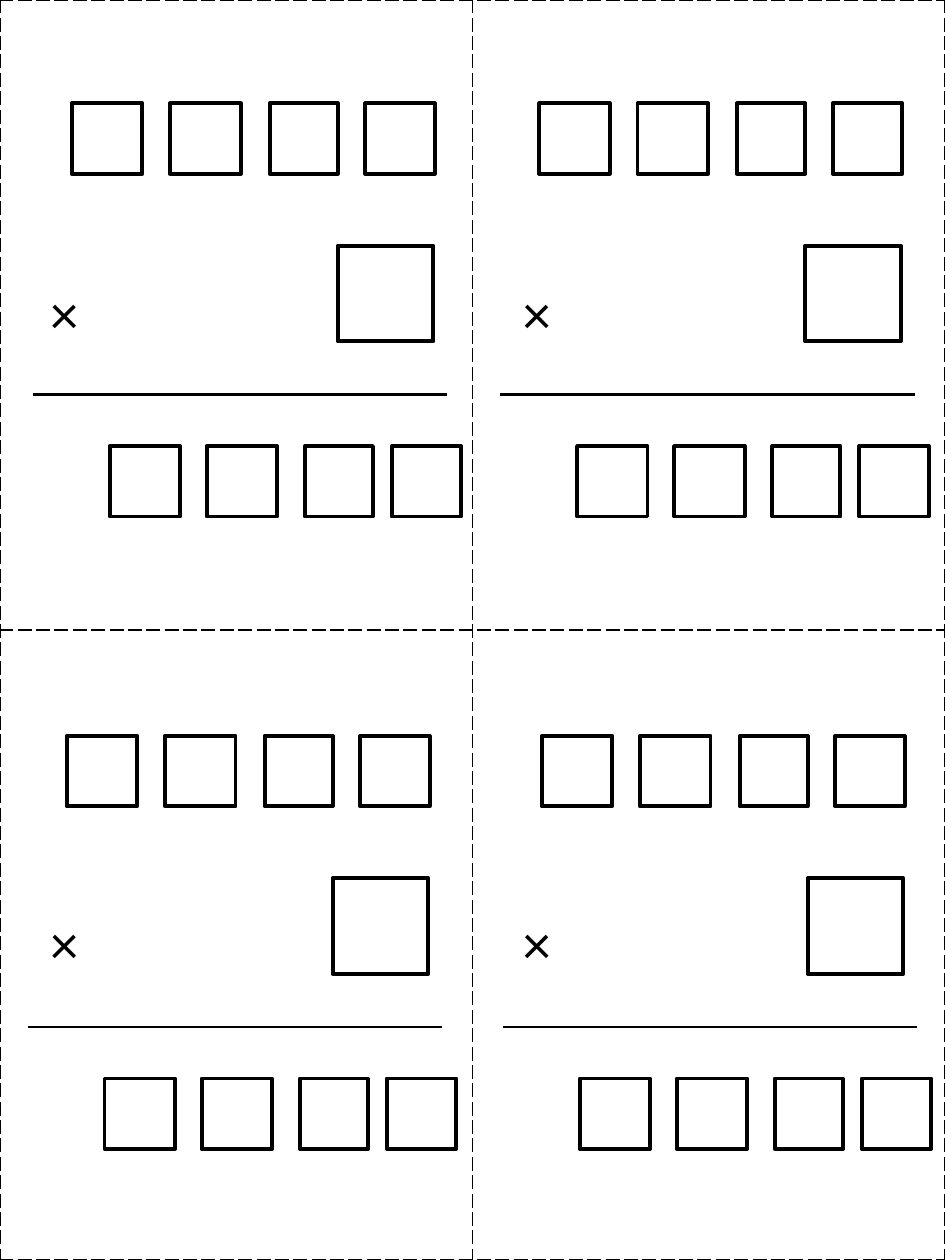
from dataclasses import dataclass

from lxml.etree import SubElement
from pptx import Presentation
from pptx.dml.color import RGBColor
from pptx.enum.shapes import MSO_CONNECTOR, MSO_SHAPE
from pptx.enum.text import MSO_ANCHOR
from pptx.oxml.ns import qn
from pptx.util import Inches, Pt


@dataclass(frozen=True)
class Theme:
    ink: str = "000000"
    paper: str = "FFFFFF"
    font: str = "Calibri"
    sign: float = 32
    box: float = 2.25
    rule: float = 1.5
    edge: float = 1


THEME = Theme()
WIDE, HIGH = 7.5, 10

# Top left corner of the first digit box on each card
CARDS = [(0.57, 0.82), (4.28, 0.82), (0.53, 5.84), (4.3, 5.84)]

# Left offset and width of each box in the two rows of digits
FACTOR = [(0, 0.56), (0.78, 0.56), (1.57, 0.54), (2.33, 0.55)]
RESULT = [(0.3, 0.56), (1.07, 0.56), (1.85, 0.54), (2.54, 0.55)]
TALL = 0.56


def write(frame, text, *, size, color, font=THEME.font):
    run = frame.paragraphs[0].add_run()
    run.text = text
    run.font.size = Pt(size)
    run.font.name = font
    run.font.color.rgb = RGBColor.from_string(color)


def dash(cell):
    """Give all four sides of a cell a dashed border."""
    props = cell._tc.get_or_add_tcPr()
    for side in ("lnL", "lnR", "lnT", "lnB"):
        line = SubElement(props, qn(f"a:{side}"), w=str(Pt(THEME.edge)))
        fill = SubElement(line, qn("a:solidFill"))
        SubElement(fill, qn("a:srgbClr"), val=THEME.ink)
        SubElement(line, qn("a:prstDash"), val="lgDash")


def add_grid(shapes):
    grid = shapes.add_table(2, 2, 0, 0, Inches(WIDE), Inches(HIGH)).table
    grid.first_row = grid.horz_banding = False
    for cell in grid.iter_cells():
        cell.vertical_anchor = MSO_ANCHOR.MIDDLE
        cell.margin_left = Inches(0.4)
        dash(cell)
        cell.fill.background()
        write(cell.text_frame, "×", size=THEME.sign, color=THEME.ink)


def add_box(shapes, left, top, width, height):
    box = shapes.add_shape(MSO_SHAPE.RECTANGLE, Inches(left), Inches(top),
                           Inches(width), Inches(height))
    box.shadow.inherit = False
    box.fill.solid()
    box.fill.fore_color.rgb = RGBColor.from_string(THEME.paper)
    box.line.color.rgb = RGBColor.from_string(THEME.ink)
    box.line.width = Pt(THEME.box)


def add_row(shapes, left, top, row):
    for shift, width in row:
        add_box(shapes, left + shift, top, width, TALL)


def add_rule(shapes, left, top, width):
    rule = shapes.add_connector(MSO_CONNECTOR.STRAIGHT, Inches(left),
                                Inches(top), Inches(left + width), Inches(top))
    rule.line.color.rgb = RGBColor.from_string(THEME.ink)
    rule.line.width = Pt(THEME.rule)
    SubElement(rule._element.spPr, qn("a:effectLst"))


def add_card(shapes, left, top):
    # Number to multiply
    add_row(shapes.add_group_shape().shapes, left, top, FACTOR)
    # Multiplier and rule
    add_box(shapes, left + 2.11, top + 1.13, 0.76, 0.76)
    add_rule(shapes, left - 0.31, top + 2.31, 3.29)
    # Product
    add_row(shapes, left, top + 2.72, RESULT)


def main():
    deck = Presentation()
    deck.slide_width, deck.slide_height = Inches(WIDE), Inches(HIGH)
    slide = deck.slides.add_slide(deck.slide_layouts[6])
    add_grid(slide.shapes)
    for left, top in CARDS:
        add_card(slide.shapes, left, top)
    deck.save("out.pptx")


if __name__ == "__main__":
    main()
